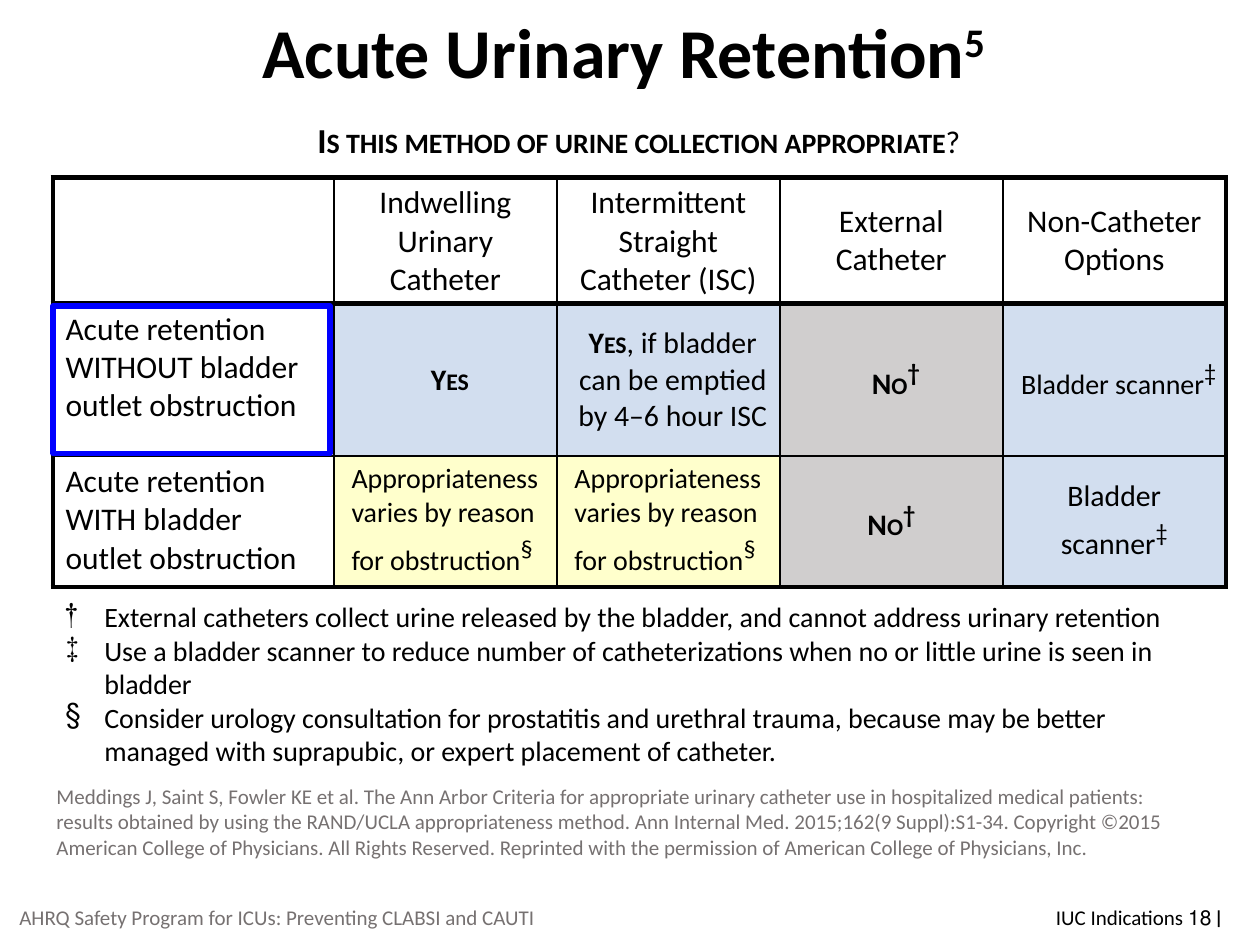
from lxml import etree
from pptx import Presentation
from pptx.dml.color import RGBColor
from pptx.enum.shapes import MSO_SHAPE
from pptx.enum.text import MSO_ANCHOR, PP_ALIGN
from pptx.oxml.ns import qn
from pptx.util import Inches, Pt

LEFT, CENTER, RIGHT = PP_ALIGN.LEFT, PP_ALIGN.CENTER, PP_ALIGN.RIGHT
TOP, MIDDLE = MSO_ANCHOR.TOP, MSO_ANCHOR.MIDDLE

THEME = {
    "font": "Calibri", "number_font": "Lato",
    "ink": "000000", "muted": "767171", "highlight": "0000FF",
    "yes": "D2DEEF", "no": "D0CECE", "varies": "FFFFCC",
    "title": 40, "question": 20, "header": 18, "answer": 17,
    "note": 16, "mark": 24, "small": 12,
    "thick": 3, "thin": 1,
}


def add_runs(para, runs, size, color="ink"):
    """Add (text, options) runs; options: size, font, bold, caps, raised."""
    for text, options in runs:
        span = para.add_run()
        span.text = text
        span.font.name = options.get("font", THEME["font"])
        span.font.size = Pt(THEME[options.get("size", size)])
        span.font.bold = options.get("bold", False)
        span.font.color.rgb = RGBColor.from_string(THEME[color])
        if options.get("caps"):
            span.font._element.set("cap", "small")
        if options.get("raised"):
            span.font._element.set("baseline", "30000")


def add_text(page, place, runs, size, color="ink", align=LEFT, anchor=TOP):
    box = page.shapes.add_textbox(*[Inches(n) for n in place])
    box.text_frame.word_wrap = True
    box.text_frame.vertical_anchor = anchor
    para = box.text_frame.paragraphs[0]
    para.alignment = align
    add_runs(para, runs, size, color)
    return box


deck = Presentation()
deck.slide_width, deck.slide_height = Inches(10), Inches(7.5)
page = deck.slides.add_slide(deck.slide_layouts[5])

# Title and question
title = page.shapes.title
title.left, title.top = Inches(0.64), Inches(0)
title.width, title.height = Inches(8.62), Inches(0.89)
title.text_frame.vertical_anchor = MIDDLE
para = title.text_frame.paragraphs[0]
para.alignment = CENTER
para.line_spacing = 0.9
add_runs(para, [("Acute Urinary Retention", {"bold": True}),
                ("5", {"bold": True, "raised": True})], "title")

STRONG = {"bold": True, "caps": True}
add_text(page, (1.81, 0.89, 6.52, 0.44),
         [("Is this method of urine collection appropriate", STRONG),
          ("?", {"size": "header"})], "question", align=CENTER)

# Table content: (runs, size, fill, alignment, left indent)
MARK = {"size": "mark", "raised": True}
BOLD_MARK = {**MARK, "bold": True}
headers = ["Indwelling Urinary Catheter", "Intermittent Straight Catheter (ISC)",
           "External Catheter", "Non-Catheter Options"]
no_runs = [("No", STRONG), ("†", BOLD_MARK)]
scanner_runs = [("Bladder scanner", {}), ("‡", MARK)]
varies = ([("Appropriateness varies by reason for obstruction", {}), ("§", MARK)],
          "note", "varies", LEFT, 0.07)
rows = [
    [([], "header", None, LEFT, 0)]
    + [([(header, {})], "header", None, CENTER, 0) for header in headers],
    [([("Acute retention WITHOUT bladder outlet obstruction", {})],
      "header", None, LEFT, 0),
     ([("Yes", STRONG)], "answer", "yes", CENTER, 0.07),
     ([("Yes", STRONG), (", if bladder can be emptied by 4–6 hour ISC", {})],
      "answer", "yes", CENTER, 0.07),
     (no_runs, "answer", "no", CENTER, 0.07),
     (scanner_runs, "note", "yes", CENTER, 0.07)],
    [([("Acute retention WITH bladder outlet obstruction", {})],
      "header", None, LEFT, 0),
     varies, varies,
     (no_runs, "answer", "no", CENTER, 0),
     (scanner_runs, "answer", "yes", CENTER, 0)],
]
column_widths = [2.23] + [1.77] * 4
row_heights = [0.88, 1.21, 1.04]

table = page.shapes.add_table(
    len(rows), len(column_widths), Inches(0.42), Inches(1.41),
    Inches(sum(column_widths)), Inches(sum(row_heights))).table
table.first_row = table.horz_banding = False
for column, width in zip(table.columns, column_widths):
    column.width = Inches(width)
for row, height in zip(table.rows, row_heights):
    row.height = Inches(height)

for r, row in enumerate(rows):
    for c, (runs, size, fill, align, indent) in enumerate(row):
        cell = table.cell(r, c)
        # Thick outer frame and header rule, thin lines elsewhere
        thick_sides = {"lnL": c == 0, "lnR": c == len(row) - 1,
                       "lnT": r < 2, "lnB": r != 1}
        properties = cell._tc.get_or_add_tcPr()
        for side, thick in thick_sides.items():
            width = Pt(THEME["thick" if thick else "thin"])
            line = etree.SubElement(properties, qn("a:" + side), w=str(width))
            solid = etree.SubElement(line, qn("a:solidFill"))
            etree.SubElement(solid, qn("a:srgbClr"), val=THEME["ink"])
        if fill:
            cell.fill.solid()
            cell.fill.fore_color.rgb = RGBColor.from_string(THEME[fill])
            cell.margin_left = cell.margin_right = Inches(0.07)
            cell.margin_top = cell.margin_bottom = 0
        else:
            cell.fill.background()
        cell.vertical_anchor = MIDDLE if c else TOP
        para = cell.text_frame.paragraphs[0]
        para.alignment = align
        if indent:
            para._p.get_or_add_pPr().set("marL", str(Inches(indent)))
        add_runs(para, runs, size)

# Highlight around the first row label
frame = page.shapes.add_shape(MSO_SHAPE.RECTANGLE, Inches(0.42), Inches(2.43),
                              Inches(2.2), Inches(1.17))
frame.shadow.inherit = False
frame.fill.background()
frame.line.color.rgb = RGBColor.from_string(THEME["highlight"])
frame.line.width = Pt(THEME["thick"])

# Footnotes, with their marks as bullets
footnotes = [
    ("†", "External catheters collect urine released by the bladder, "
          "and cannot address urinary retention"),
    ("‡", "Use a bladder scanner to reduce number of catheterizations "
          "when no or little urine is seen in bladder"),
    ("§", "Consider urology consultation for prostatitis and urethral trauma, because "
          "may be better managed with suprapubic, or expert placement of catheter."),
]
notes = add_text(page, (0.42, 4.71, 9.3, 1.45), [], "note").text_frame
for i, (mark, text) in enumerate(footnotes):
    para = notes.add_paragraph() if i else notes.paragraphs[0]
    properties = para._p.get_or_add_pPr()
    properties.set("marL", str(Inches(0.31)))
    properties.set("indent", str(Inches(-0.31)))
    etree.SubElement(properties, qn("a:buChar"), char=mark)
    add_runs(para, [(text, {})], "note")

# Citation and footer
citation = (
    "Meddings J, Saint S, Fowler KE et al. The Ann Arbor Criteria for appropriate "
    "urinary catheter use in hospitalized medical patients: results obtained by using "
    "the RAND/UCLA appropriateness method. Ann Internal Med. 2015;162(9 Suppl):S1-34. "
    "Copyright ©2015 American College of Physicians. All Rights Reserved. Reprinted "
    "with the permission of American College of Physicians, Inc.")
add_text(page, (0.35, 6.17, 9.3, 0.71), [(citation, {})], "small", "muted")
add_text(page, (0, 7.08, 4.4, 0.4),
         [("AHRQ Safety Program for ICUs: Preventing CLABSI and CAUTI", {})],
         "small", "muted", CENTER, MIDDLE)
add_text(page, (7.54, 7.08, 2.25, 0.4),
         [("IUC Indications ", {}), ("׀ ", {"font": THEME["number_font"]}), ("18", {})],
         "small", align=RIGHT, anchor=MIDDLE)

deck.save("out.pptx")
